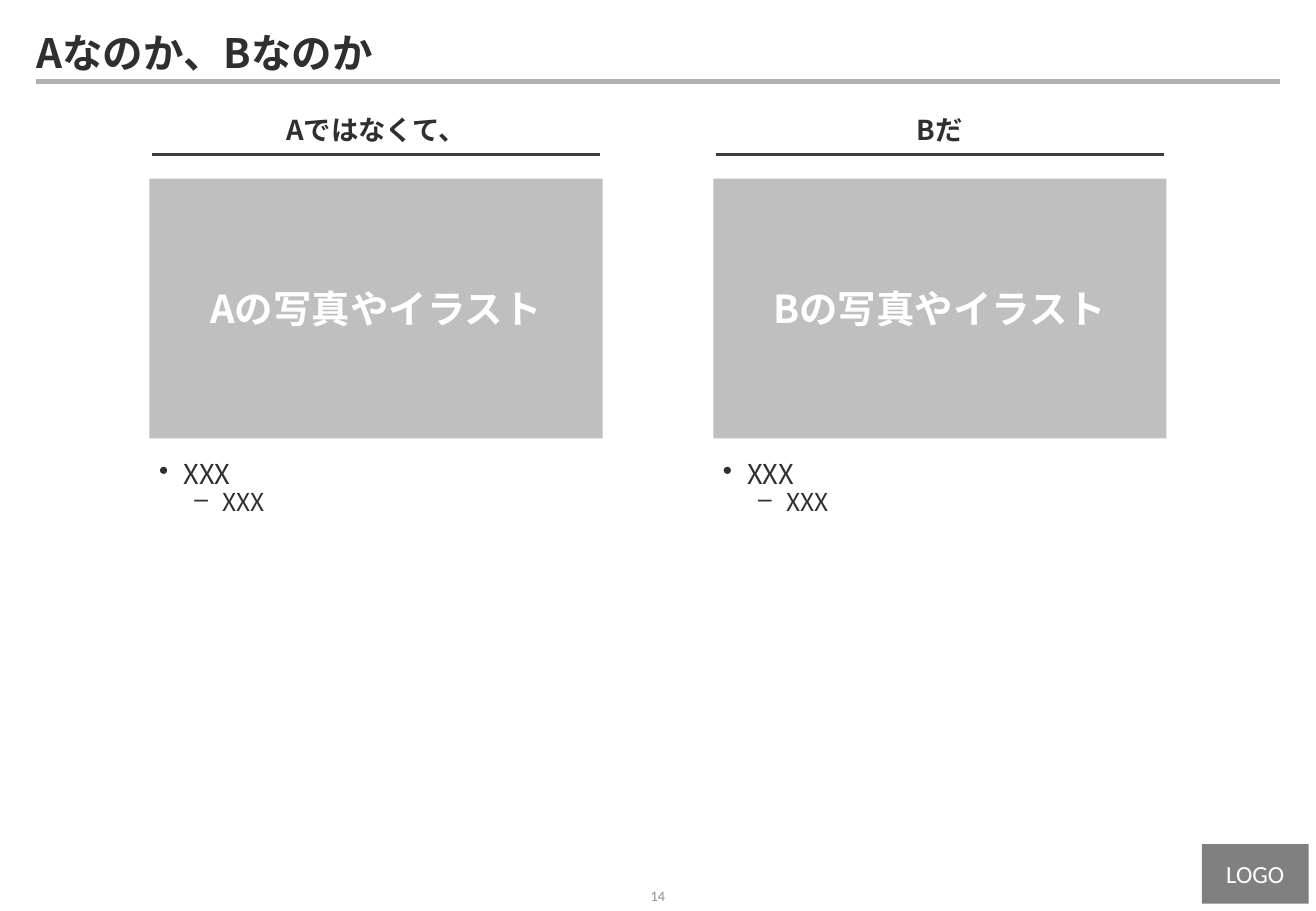
from pptx import Presentation
from pptx.dml.color import RGBColor
from pptx.enum.shapes import MSO_CONNECTOR, MSO_SHAPE
from pptx.enum.text import MSO_ANCHOR, PP_ALIGN
from pptx.oxml.ns import qn
from pptx.util import Inches, Pt

RECT, STRAIGHT = MSO_SHAPE.RECTANGLE, MSO_CONNECTOR.STRAIGHT
LEFT, CENTER = PP_ALIGN.LEFT, PP_ALIGN.CENTER
TOP, MIDDLE = MSO_ANCHOR.TOP, MSO_ANCHOR.MIDDLE

# Content
TITLE = "Aなのか、Bなのか"
PAGE = "14"
LOGO = "LOGO"
COLUMNS = [
    ("Aではなくて、", "Aの写真やイラスト", ["XXX", "XXX"]),
    ("Bだ", "Bの写真やイラスト", ["XXX", "XXX"]),
]
# Per level: bullet, text size, left indent, hanging indent
LEVELS = [("•", 16.2, 0.2, 0.2), ("–", 14.6, 0.52, 0.23)]

# Style
COLORS = {"text": "2F2F2F", "rule": "B1B1B1", "underline": "3C3C3C",
          "photo": "BFBFBF", "logo": "808080", "page": "8F8F8F", "white": "FFFFFF"}
JAPANESE, LATIN = "Noto Sans CJK JP", "Calibri"

# Grid
SLIDE_W, SLIDE_H = 10.83, 7.5
MARGIN = 0.3
COLUMN_W, GUTTER = 3.73, 0.91
COLUMN_LEFT = (SLIDE_W - len(COLUMNS) * COLUMN_W - GUTTER) / 2
HEADING_Y, HEADING_H = 0.88, 0.37
UNDERLINE_Y, UNDERLINE_INSET = 1.27, 0.02
PHOTO_Y, PHOTO_H = 1.47, 2.14
POINTS_Y, POINTS_H = 3.75, 3.15

prs = Presentation()
prs.slide_width, prs.slide_height = Inches(SLIDE_W), Inches(SLIDE_H)
slide = prs.slides.add_slide(prs.slide_layouts[6])


def color(name):
    return RGBColor.from_string(COLORS[name])


def style(paragraph, size, ink, font=JAPANESE, bold=False, align=LEFT):
    paragraph.alignment = align
    for run in paragraph.runs:
        run.font.size, run.font.bold, run.font.name = Pt(size), bold, font
        run.font.color.rgb = color(ink)
        east_asian = run._r.get_or_add_rPr().makeelement(qn("a:ea"), {"typeface": font})
        run.font._element.find(qn("a:latin")).addnext(east_asian)


def add_text(box, lines, fill=None, anchor=MIDDLE, insets=(0, 0)):
    if fill:
        shape = slide.shapes.add_shape(RECT, *map(Inches, box))
        shape.shadow.inherit = False
        shape.fill.solid()
        shape.fill.fore_color.rgb = color(fill)
        shape.line.fill.background()
    else:
        shape = slide.shapes.add_textbox(*map(Inches, box))
    frame = shape.text_frame
    frame.word_wrap, frame.vertical_anchor = True, anchor
    frame.margin_left = frame.margin_right = Inches(insets[0])
    frame.margin_top = frame.margin_bottom = Inches(insets[1])
    frame.text = "\n".join(lines)
    return frame.paragraphs


def add_rule(left, right, y, ink, width):
    rule = slide.shapes.add_connector(STRAIGHT, *map(Inches, (left, y, right, y)))
    rule.line.color.rgb, rule.line.width = color(ink), Pt(width)
    properties = rule._element.spPr
    properties.append(properties.makeelement(qn("a:effectLst"), {}))


def add_bullet(paragraph, level):
    mark, size, indent, hanging = LEVELS[level]
    style(paragraph, size, "text")
    paragraph.level, paragraph.line_spacing = level, 0.9
    properties = paragraph._p.get_or_add_pPr()
    properties.set("marL", str(Inches(indent)))
    properties.set("indent", str(-Inches(hanging)))
    properties.append(properties.makeelement(qn("a:buChar"), {"char": mark}))


# Frame: title rule, logo block, page number, title
add_rule(MARGIN, SLIDE_W - MARGIN, 0.67, "rule", 3)
style(add_text((9.89, 6.95, 0.88, 0.49), [LOGO], "logo")[0],
      14.6, "white", LATIN, align=CENTER)
style(add_text((5.1, 7.25, 0.63, 0.25), [PAGE])[0], 8.5, "page", LATIN, align=CENTER)
title = add_text((MARGIN, 0.25, SLIDE_W - 2 * MARGIN, 0.41), [TITLE])[0]
title.line_spacing = 0.9
style(title, 24, "text", bold=True)

# Columns: underlined heading, photo area, points
for number, (heading, photo, points) in enumerate(COLUMNS):
    x = COLUMN_LEFT + number * (COLUMN_W + GUTTER)
    add_rule(x + UNDERLINE_INSET, x + COLUMN_W - UNDERLINE_INSET,
             UNDERLINE_Y, "underline", 2)
    style(add_text((x, HEADING_Y, COLUMN_W, HEADING_H), [heading], "white")[0],
          16.2, "text", bold=True, align=CENTER)
    style(add_text((x, PHOTO_Y, COLUMN_W, PHOTO_H), [photo], "photo")[0],
          22.8, "white", bold=True, align=CENTER)
    bullets = add_text((x, POINTS_Y, COLUMN_W, POINTS_H), points,
                       anchor=TOP, insets=(0.08, 0.04))
    for level, bullet in enumerate(bullets):
        add_bullet(bullet, level)

prs.save("out.pptx")
